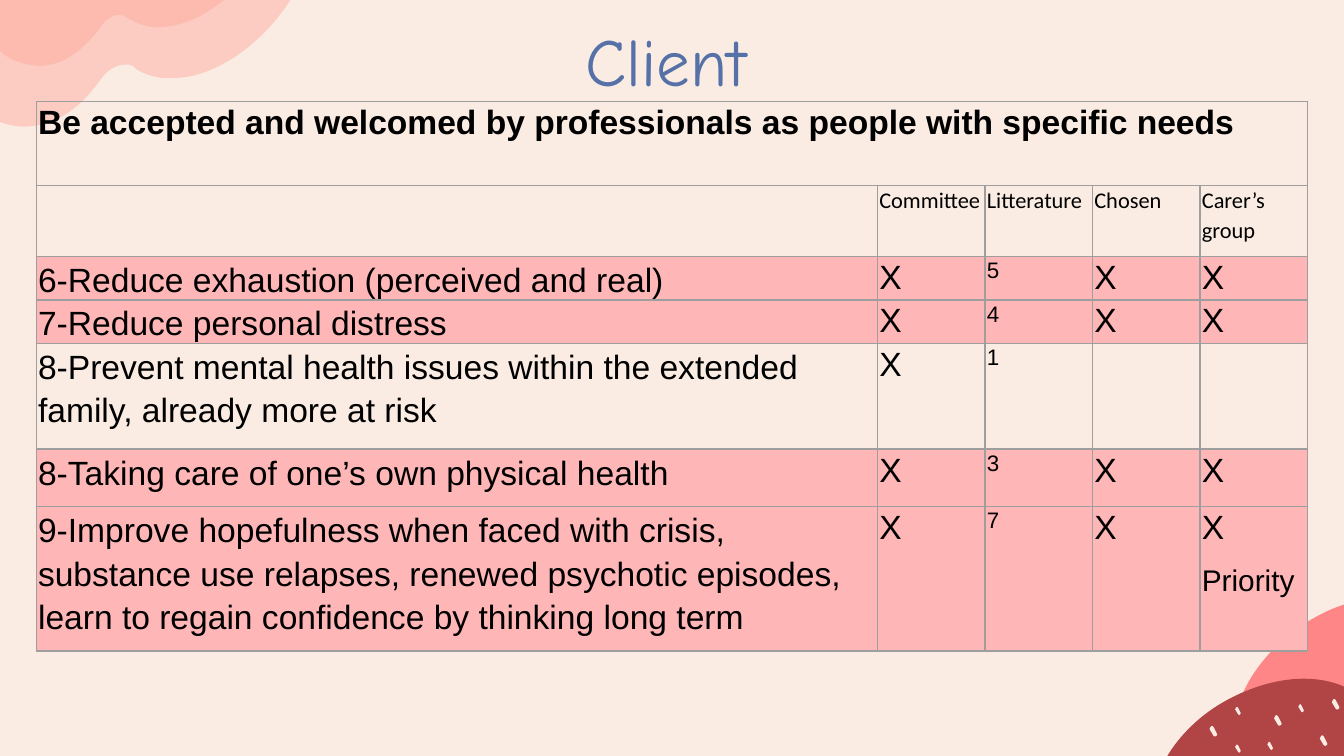
from dataclasses import dataclass

from lxml.etree import SubElement
from pptx import Presentation
from pptx.dml.color import RGBColor
from pptx.enum.text import MSO_ANCHOR, PP_ALIGN
from pptx.oxml.ns import qn
from pptx.util import Pt

CREAM, PINK, BLACK, GREY = "FAECE3", "FFB6B7", "000000", "9E9E9E"
UNIT = Pt(0.72)

LARGE_WAVE = [
    (98, -163), (75, -156, 51, -141, 34, -121), (6, -89, -6, -53, -3, -25),
    (-2, -19, -4, -13, -8, -7), (-9, -7, -9, -7, -9, -6), (-35, 31, -34, 74, -7, 88),
    (2, 92, 12, 95, 22, 94), (40, 93, 58, 83, 75, 59), (80, 52, 87, 48, 93, 48),
    (95, 48, 98, 48, 100, 50), (101, 51, 102, 52, 104, 53), (112, 57, 121, 59, 131, 58),
    (158, 57, 190, 37, 212, 6), (226, -13, 233, -34, 234, -52),
]
SMALL_WAVE = [
    (91, -163), (72, -157, 52, -145, 38, -128), (15, -103, 6, -73, 8, -50),
    (9, -45, 7, -40, 4, -35), (-17, -4, -16, 31, 7, 43), (14, 47, 23, 49, 31, 49),
    (46, 48, 61, 39, 74, 21), (78, 15, 84, 11, 88, 11), (91, 11, 93, 12, 94, 13),
    (96, 14, 97, 15, 98, 15), (105, 19, 113, 21, 121, 20), (143, 19, 169, 3, 187, -22),
    (198, -38, 204, -55, 205, -70),
]
CORAL_BLOB = [
    (277, 0), (290, 0, 302, 5, 312, 14), (334, 34, 327, 73, 294, 103),
    (288, 108, 285, 113, 284, 118), (281, 146, 262, 176, 230, 199),
    (209, 214, 183, 223, 160, 224), (56, 87), (61, 70, 73, 52, 90, 37),
    (113, 17, 140, 6, 164, 6), (179, 6, 192, 11, 201, 20), (202, 21, 203, 22, 204, 23),
    (207, 26, 210, 27, 214, 27), (219, 27, 224, 25, 229, 21), (247, 6, 262, 0, 277, 0),
]
RED_BLOB = [
    (105, 66), (126, 66, 143, 73, 154, 86), (154, 88, 155, 89, 156, 90),
    (158, 94, 163, 96, 168, 96), (172, 96, 177, 95, 181, 92), (197, 82, 211, 78, 223, 78),
    (240, 78, 254, 85, 264, 98), (283, 120, 269, 159, 233, 182),
    (226, 187, 222, 191, 221, 196), (213, 223, 189, 250, 154, 268),
    (135, 277, 114, 282, 95, 282), (90, 282, 86, 282, 81, 281), (0, 130),
    (8, 114, 22, 98, 41, 86), (62, 73, 85, 66, 105, 66),
]
SEED = [(2, 0), (2.5, 0, 3, 0, 3, 1), (5.5, 6), (6, 6.5, 5.5, 7, 5, 7.5),
        (4, 8), (3.5, 8, 3, 8, 3, 7.5), (0, 2.5), (0, 2, 0, 1, 1, 0.5)]
SMALL_SEEDS = [(54, 87), (78, 113), (101, 85), (54, 115)]
LARGE_SEEDS = [(83, 93), (126, 81), (35, 101), (117, 108)]

HEADING = "Be accepted and welcomed by professionals as people with specific needs"
COLUMNS = ["Committee", "Litterature", "Chosen", "Carer’s group"]
GOALS = [
    ("6-Reduce exhaustion (perceived and real)", "X", "5", "X", "X"),
    ("7-Reduce personal distress", "X", "4", "X", "X"),
    ("8-Prevent mental health issues within the extended family, already more at risk",
     "X", "1", "", ""),
    ("8-Taking care of one’s own physical health", "X", "3", "X", "X"),
    ("9-Improve hopefulness when faced with crisis, substance use relapses, renewed "
     "psychotic episodes, learn to regain confidence by thinking long term",
     "X", "7", "X", "X\nPriority"),
]
ROW_HEIGHTS = [45, 38, 23.2, 23.2, 56.7, 31, 77.2]
CHECK_WIDTH = 57.6


@dataclass
class Box:
    left: float
    top: float
    width: float
    height: float


def colour(value):
    return RGBColor.from_string(value)


def draw_outline(page, box, outline, fill, opacity=100):
    anchors = [(segment[-2] * UNIT, segment[-1] * UNIT) for segment in outline]
    builder = page.shapes.build_freeform(*anchors[0], scale=1.0)
    builder.add_line_segments(anchors[1:], close=True)
    shape = builder.convert_to_shape(Pt(box.left), Pt(box.top))
    left, top = (min(values) for values in zip(*anchors))
    lines = list(shape._element.iter(qn("a:lnTo")))
    for line, segment in zip(lines, outline[1:]):
        if len(segment) == 6:
            line.tag = qn("a:cubicBezTo")
            controls = zip(segment[0:4:2], segment[1:4:2])
            for index, (x, y) in enumerate(controls):
                SubElement(line, qn("a:pt"), x=str(round(x * UNIT - left)),
                           y=str(round(y * UNIT - top)))
            line.append(line[0])
    shape.shadow.inherit = False
    shape.line.fill.background()
    shape.fill.solid()
    shape.fill.fore_color.rgb = colour(fill)
    if opacity < 100:
        tint = shape.fill._xPr.find(qn("a:solidFill"))[0]
        SubElement(tint, qn("a:alpha"), val=str(opacity * 1000))


def add_waves(page, box):
    for outline in (LARGE_WAVE, SMALL_WAVE):
        draw_outline(page, box, outline, "FFA79B", 47)


def add_berry(page, box):
    draw_outline(page, box, CORAL_BLOB, "FF8687")
    draw_outline(page, box, RED_BLOB, "B14545")
    for seeds, size in ((SMALL_SEEDS, 0.75), (LARGE_SEEDS, 1)):
        for left, top in seeds:
            seed = [tuple(value * size + (left, top)[index % 2]
                          for index, value in enumerate(segment)) for segment in SEED]
            draw_outline(page, box, seed, CREAM)


def format_paragraph(paragraph, font, size, bold=False, spacing=1.07, after=8):
    paragraph.line_spacing = spacing
    paragraph.space_after = Pt(after)
    paragraph.font.size = Pt(size)
    for span in paragraph.runs:
        span.font.name = font
        span.font.size = Pt(size)
        span.font.bold = bold
        span.font.color.rgb = colour(BLACK)


def add_title(page, box):
    title = page.shapes.title
    title.left, title.top = Pt(box.left), Pt(box.top)
    title.width, title.height = Pt(box.width), Pt(box.height)
    frame = title.text_frame
    frame.margin_left = frame.margin_right = frame.margin_top = frame.margin_bottom = 0
    frame.vertical_anchor = MSO_ANCHOR.MIDDLE
    frame.text = "Client"
    frame.paragraphs[0].alignment = PP_ALIGN.CENTER
    font = frame.paragraphs[0].runs[0].font
    font.name, font.size, font.color.rgb = "Comic Neue", Pt(36), colour("5571A7")


def format_cell(cell, fill=None):
    cell.margin_left = cell.margin_right = Pt(1)
    cell.margin_top = cell.margin_bottom = 0
    properties = cell._tc.get_or_add_tcPr()
    for side in ("lnL", "lnR", "lnT", "lnB"):
        border = SubElement(properties, qn(f"a:{side}"), w=str(Pt(0.75)))
        SubElement(SubElement(border, qn("a:solidFill")), qn("a:srgbClr"), val=GREY)
    if fill:
        cell.fill.solid()
        cell.fill.fore_color.rgb = colour(fill)
    else:
        cell.fill.background()


def add_goal_table(page, box):
    rows = [(HEADING, "", "", "", ""), ("", *COLUMNS), *GOALS]
    table = page.shapes.add_table(len(rows), 5, Pt(box.left), Pt(box.top),
                                  Pt(box.width), Pt(box.height)).table
    table.first_row = table.horz_banding = False
    table.columns[0].width = Pt(box.width - 4 * CHECK_WIDTH)
    for index in range(1, 5):
        table.columns[index].width = Pt(CHECK_WIDTH)
    for row, (texts, height) in enumerate(zip(rows, ROW_HEIGHTS)):
        table.rows[row].height = Pt(height)
        fill = PINK if row > 1 and texts[-1] else None
        for column, text in enumerate(texts):
            cell = table.cell(row, column)
            format_cell(cell, fill)
            if not text:
                continue
            cell.text_frame.text = text
            for paragraph in cell.text_frame.paragraphs:
                if row == 1:
                    format_paragraph(paragraph, "Calibri", 12)
                elif row == 0:
                    format_paragraph(paragraph, "Arial", 18, bold=True)
                elif column == 0:
                    format_paragraph(paragraph, "Arial", 18, spacing=1.15, after=10)
                else:
                    size = 12 if column == 2 else 16 if paragraph.text == "Priority" else 18
                    format_paragraph(paragraph, "Arial", size)
    table.cell(0, 0).merge(table.cell(0, 4))


def main():
    deck = Presentation()
    deck.slide_width, deck.slide_height = Pt(720), Pt(405)
    page = deck.slides.add_slide(deck.slide_layouts[5])
    page.background.fill.solid()
    page.background.fill.fore_color.rgb = colour(CREAM)
    add_waves(page, Box(0, 0, 170, 68))
    add_berry(page, Box(622.8, 316.1, 97.2, 88.9))
    add_title(page, Box(53.3, 9.4, 607, 45.4))
    add_goal_table(page, Box(19.4, 54.5, 681.1, sum(ROW_HEIGHTS)))
    deck.save("out.pptx")


if __name__ == "__main__":
    main()
